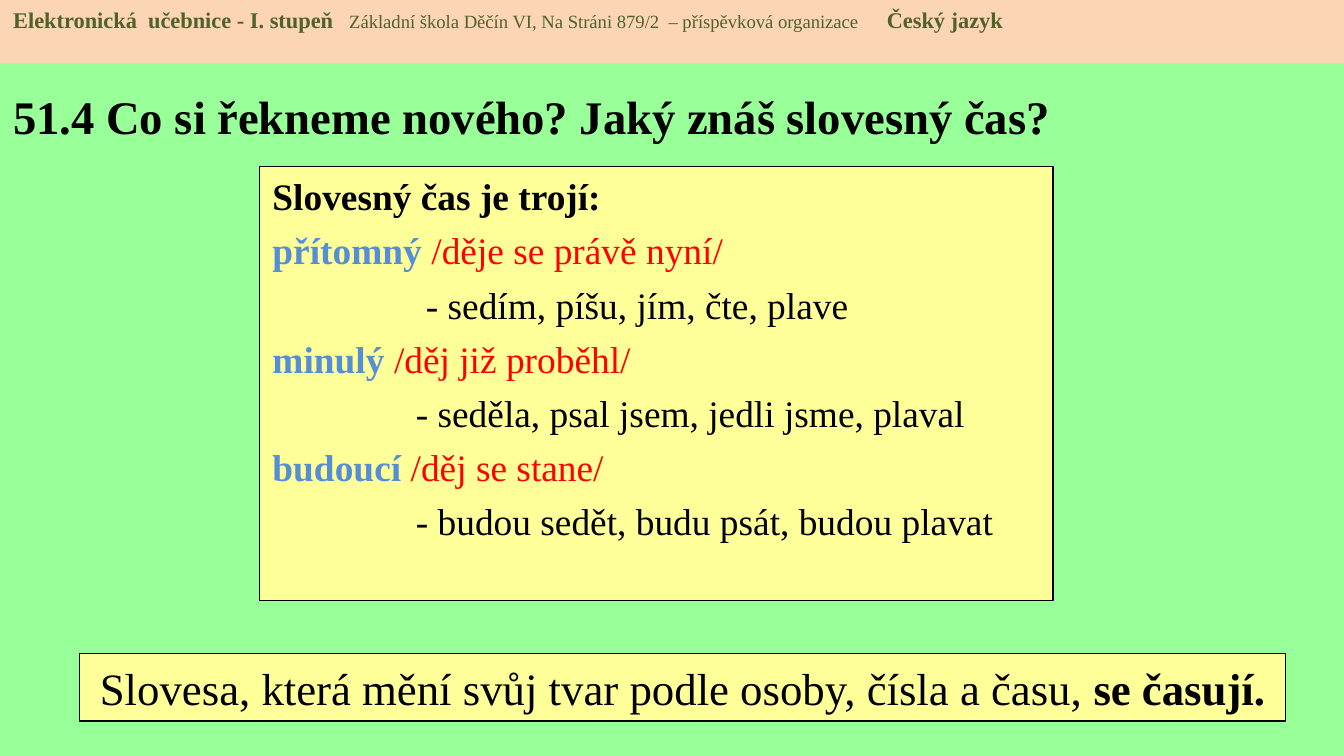
from dataclasses import dataclass

from lxml.etree import SubElement
from pptx import Presentation
from pptx.dml.color import RGBColor
from pptx.enum.shapes import MSO_SHAPE
from pptx.enum.text import MSO_ANCHOR, PP_ALIGN
from pptx.oxml.ns import qn
from pptx.slide import Slide
from pptx.util import Cm, Pt

COLOURS = {
    "background": "99FF99",
    "header": "FCD5B5",
    "panel": "FFFF99",
    "olive": "4F6228",
    "blue": "558ED5",
    "red": "FF0000",
    "black": "000000",
}


@dataclass
class Run:
    text: str
    size: float
    colour: str = "black"
    bold: bool = False


@dataclass
class Line:
    runs: list[Run]
    indent: float = 0
    before: float = 0
    align: PP_ALIGN = PP_ALIGN.LEFT
    tabs: tuple[float, ...] = ()


@dataclass
class Box:
    left: float
    top: float
    width: float
    height: float
    lines: list[Line]
    fill: str | None = None
    outline: str | None = None
    anchor: MSO_ANCHOR = MSO_ANCHOR.TOP


@dataclass
class Tense:
    name: str
    meaning: str
    examples: str
    indent: float


def colour(name: str) -> RGBColor:
    """Return the named colour."""
    return RGBColor.from_string(COLOURS[name])


def write_line(paragraph, line: Line) -> None:
    """Fill a paragraph with the runs of a line."""
    layout = {"alignment": line.align, "space_before": Pt(line.before)}
    for name, value in layout.items():
        setattr(paragraph, name, value)
    properties = paragraph._p.get_or_add_pPr()
    properties.set("marL", str(Cm(line.indent)))
    properties.set("indent", "0")
    if line.tabs:
        tab_list = SubElement(properties, qn("a:tabLst"))
        for position in line.tabs:
            SubElement(tab_list, qn("a:tab"), pos=str(Cm(position)), algn="l")
    for item in line.runs:
        run = paragraph.add_run()
        run.text = item.text
        format_values = {"name": "Times New Roman", "size": Pt(item.size), "bold": item.bold}
        for name, value in format_values.items():
            setattr(run.font, name, value)
        run.font.color.rgb = colour(item.colour)


def draw_box(slide: Slide, box: Box) -> None:
    """Draw a text box, or a rectangle when the box has a fill."""
    place = [Cm(length) for length in (box.left, box.top, box.width, box.height)]
    if box.fill:
        shape = slide.shapes.add_shape(MSO_SHAPE.RECTANGLE, *place)
        shape.shadow.inherit = False
        shape.fill.solid()
        shape.fill.fore_color.rgb = colour(box.fill)
        if box.outline:
            shape.line.color.rgb = colour(box.outline)
            shape.line.width = Pt(0.75)
        else:
            shape.line.fill.background()
    else:
        shape = slide.shapes.add_textbox(*place)
    frame = shape.text_frame
    for name, value in {"word_wrap": True, "vertical_anchor": box.anchor}.items():
        setattr(frame, name, value)
    for index, line in enumerate(box.lines):
        paragraph = frame.add_paragraph() if index else frame.paragraphs[0]
        write_line(paragraph, line)


def tense_lines(tenses: list[Tense]) -> list[Line]:
    """Return the heading and two lines for each tense."""
    lines = [Line([Run("Slovesný čas je trojí:", 20, bold=True)], before=5)]
    for tense in tenses:
        name = Run(f"{tense.name} ", 20, "blue", True)
        lines.append(Line([name, Run(f"/{tense.meaning}/", 20, "red")], before=5))
        lines.append(Line([Run(f"- {tense.examples}", 20)], tense.indent, 5))
    return lines


def main() -> None:
    """Build and save the slide."""
    presentation = Presentation()
    presentation.slide_width, presentation.slide_height = Cm(25.4), Cm(14.28)
    slide = presentation.slides.add_slide(presentation.slide_layouts[6])
    slide.background.fill.solid()
    slide.background.fill.fore_color.rgb = colour("background")

    title = Run("51.4 Co si řekneme nového? Jaký znáš slovesný čas?", 25, bold=True)
    header = Line(
        [
            Run("Elektronická  učebnice - I. stupeň\t", 12, "olive", True),
            Run("Základní škola Děčín VI, Na Stráni 879/2  – příspěvková organizace\t", 10, "olive"),
            Run("Český jazyk", 12, "olive", True),
        ],
        tabs=(8.38, 21.69),
    )
    tenses = [
        Tense("přítomný", "děje se právě nyní", "sedím, píšu, jím, čte, plave", 2.9),
        Tense("minulý", "děj již proběhl", "seděla, psal jsem, jedli jsme, plaval", 2.71),
        Tense("budoucí", "děj se stane", "budou sedět, budu psát, budou plavat", 2.71),
    ]
    summary = Line(
        [
            Run("Slovesa, která mění svůj tvar podle osoby, čísla a času, ", 24),
            Run("se časují.", 24, bold=True),
        ],
        align=PP_ALIGN.CENTER,
    )
    boxes = [
        Box(0, 1.37, 25.1, 1.65, [Line([title])], anchor=MSO_ANCHOR.MIDDLE),
        Box(0, 0, 25.4, 1.2, [header], "header"),
        Box(4.9, 3.15, 15, 8.2, tense_lines(tenses), "panel", "black"),
        Box(1.5, 12.35, 22.8, 1.27, [summary], "panel", "black"),
    ]
    for box in boxes:
        draw_box(slide, box)
    presentation.save("out.pptx")


if __name__ == "__main__":
    main()
